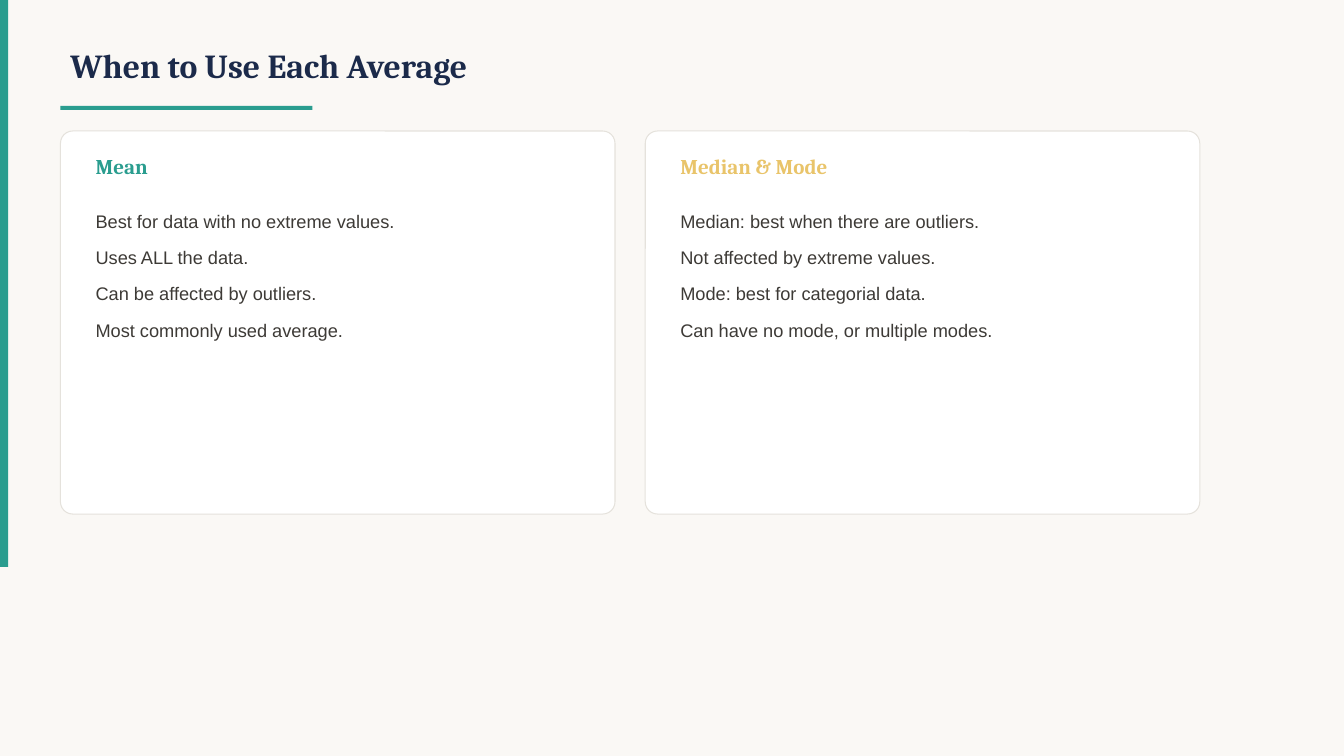
from pptx import Presentation
from pptx.dml.color import RGBColor
from pptx.enum.shapes import MSO_SHAPE
from pptx.enum.text import MSO_ANCHOR
from pptx.util import Inches, Pt

RECT, ROUNDED = MSO_SHAPE.RECTANGLE, MSO_SHAPE.ROUNDED_RECTANGLE
TOP, MIDDLE = MSO_ANCHOR.TOP, MSO_ANCHOR.MIDDLE

CREAM = RGBColor(0xFA, 0xF8, 0xF5)
TEAL = RGBColor(0x2A, 0x9D, 0x8F)
NAVY = RGBColor(0x1B, 0x2A, 0x4A)
GOLD = RGBColor(0xE9, 0xC4, 0x6A)
WHITE = RGBColor(0xFF, 0xFF, 0xFF)
BORDER = RGBColor(0xE5, 0xE2, 0xDC)
INK = RGBColor(0x3D, 0x3A, 0x36)

HEADING_FONT, BODY_FONT = "Cambria", "Arial"

SLIDE_W, SLIDE_H = 13.33, 7.5
MARGIN = 0.6
CARD_TOP, CARD_W, CARD_H, CARD_GAP = 1.3, 5.5, 3.8, 0.3
PAD = 0.25

CARDS = [
    ("Mean", TEAL, [
        "Best for data with no extreme values.",
        "Uses ALL the data.",
        "Can be affected by outliers.",
        "Most commonly used average.",
    ]),
    ("Median & Mode", GOLD, [
        "Median: best when there are outliers.",
        "Not affected by extreme values.",
        "Mode: best for categorial data.",
        "Can have no mode, or multiple modes.",
    ]),
]


def add_block(slide, kind, x, y, w, h, fill, line=None):
    sp = slide.shapes.add_shape(kind, Inches(x), Inches(y), Inches(w), Inches(h))
    sp.shadow.inherit = False
    sp.fill.solid()
    sp.fill.fore_color.rgb = fill
    if line is None:
        sp.line.fill.background()
    else:
        sp.line.color.rgb = line
        sp.line.width = Pt(0.75)
    return sp


def add_text(slide, x, y, w, h, lines, font, size, color, bold=False, anchor=MIDDLE):
    box = slide.shapes.add_textbox(Inches(x), Inches(y), Inches(w), Inches(h))
    tf = box.text_frame
    tf.word_wrap = True
    tf.vertical_anchor = anchor
    tf.text = "\n".join(lines)
    for p in tf.paragraphs:
        for r in p.runs:
            r.font.name = font
            r.font.size = Pt(size)
            r.font.bold = bold
            r.font.color.rgb = color
    return tf


def add_header(slide, x, y):
    add_text(slide, x, y, 10, 0.7, ["When to Use Each Average"],
             HEADING_FONT, 24, NAVY, bold=True)
    add_block(slide, RECT, x, y + 0.75, 2.5, 0.04, TEAL)


def add_card(slide, x, y, w, h, heading, color, lines):
    card = add_block(slide, ROUNDED, x, y, w, h, WHITE, BORDER)
    card.adjustments[0] = 0.032
    inner_x, inner_w = x + PAD, w - 2 * PAD
    add_text(slide, inner_x, y + 0.15, inner_w, 0.4, [heading],
             HEADING_FONT, 15, color, bold=True)
    tf = add_text(slide, inner_x, y + 0.65, inner_w, h - 0.9, lines,
                  BODY_FONT, 13, INK, anchor=TOP)
    for p in tf.paragraphs:
        p.line_spacing = 1.4
        p.space_after = Pt(4)


def main():
    prs = Presentation()
    prs.slide_width, prs.slide_height = Inches(SLIDE_W), Inches(SLIDE_H)
    slide = prs.slides.add_slide(prs.slide_layouts[6])
    slide.background.fill.solid()
    slide.background.fill.fore_color.rgb = CREAM

    # Accent bar on the left edge
    add_block(slide, RECT, 0, 0, 0.08, SLIDE_H * 0.75, TEAL)

    # Title with underline
    add_header(slide, MARGIN, 0.3)

    # Comparison cards
    for i, (heading, color, lines) in enumerate(CARDS):
        x = MARGIN + i * (CARD_W + CARD_GAP)
        add_card(slide, x, CARD_TOP, CARD_W, CARD_H, heading, color, lines)

    prs.save("out.pptx")


if __name__ == "__main__":
    main()
